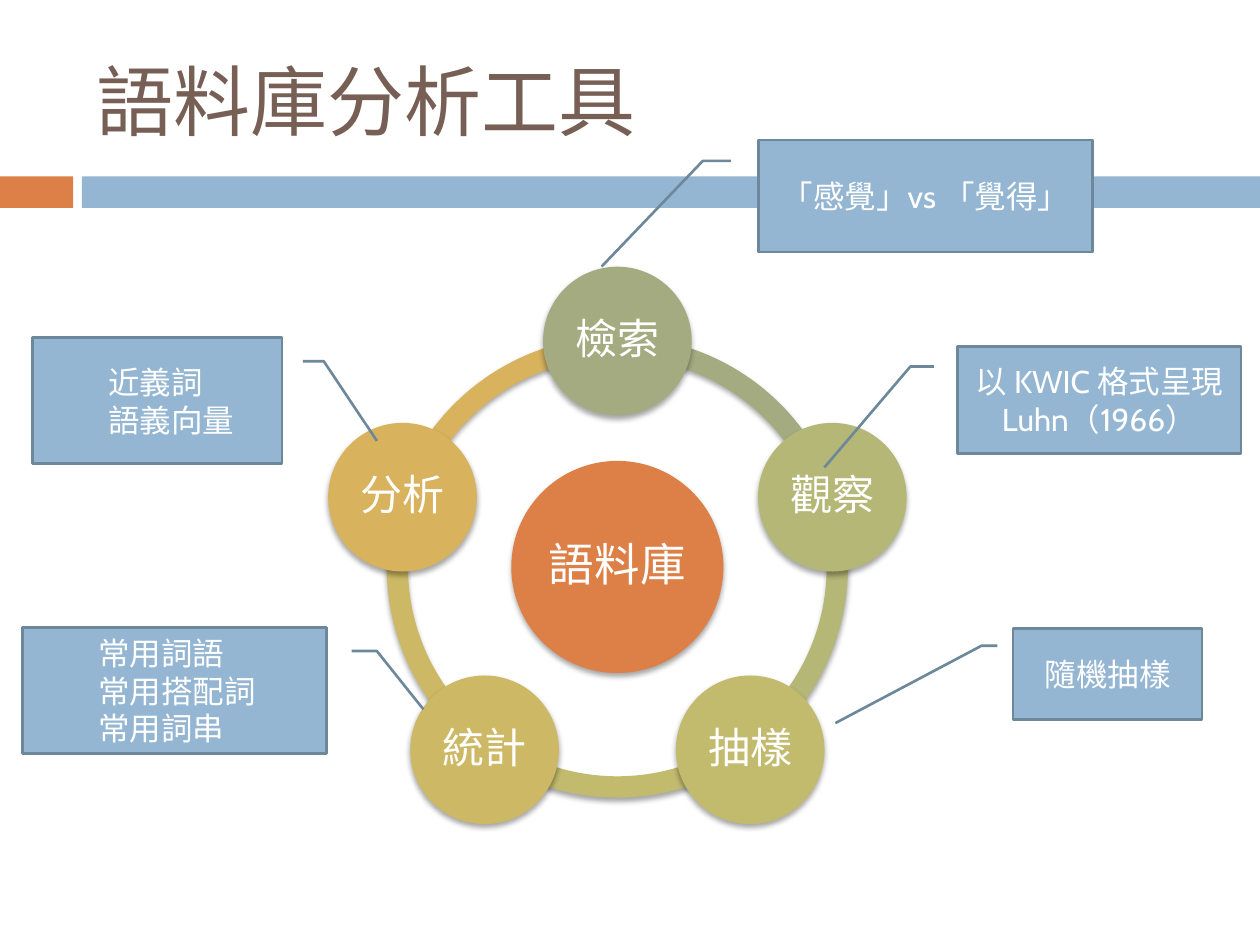
from math import cos, radians, sin

from lxml import etree
from pptx import Presentation
from pptx.dml.color import RGBColor
from pptx.enum.shapes import MSO_SHAPE as Shape
from pptx.enum.text import MSO_ANCHOR as Anchor, PP_ALIGN as Align
from pptx.oxml.ns import qn
from pptx.util import Inches, Pt

# Grid of 100 columns by 75 rows
CELL = Inches(0.1)
COLUMNS, ROWS = 100, 75
FONT = "Cabin"
COLORS = {
    "title": "775F55", "orange": "DD8047", "blue": "94B6D2",
    "edge": "6D879B", "white": "FFFFFF", "black": "000000",
    "search": "A5AB81", "observe": "B5B777", "sample": "C2BB6E",
    "count": "CDB965", "analyse": "D8B25C",
}
# Clockwise from the top
STAGES = [("檢索", "search"), ("觀察", "observe"), ("抽樣", "sample"),
          ("統計", "count"), ("分析", "analyse")]
# Box, lines, tip of the leader (y, x as shares of the box), on the left side
CALLOUTS = [
    ((60.2, 11.1, 26.5, 8.9), ["「感覺」vs 「覺得」"], (1.13, -0.47), False),
    ((76, 27.5, 22.5, 8.5), ["以 KWIC 格式呈現", "Luhn（1966）"], (1.13, -0.47), False),
    ((80.4, 49.9, 15, 7.2), ["隨機抽樣"], (1.04, -0.94), False),
    ((1.8, 49.8, 24.1, 10), ["常用詞語", "常用搭配詞", "常用詞串"], (0.65, -0.32), True),
    ((2.6, 26.8, 19.8, 10), ["近義詞", "語義向量"], (0.82, -0.38), True),
]


def color(name):
    return RGBColor.from_string(COLORS[name])


def place(box):
    return [round(length * CELL) for length in box]


def add_filled(shapes, kind, box, fill):
    shape = shapes.add_shape(kind, *place(box))
    shape.shadow.inherit = False
    shape.fill.solid()
    shape.fill.fore_color.rgb = color(fill)
    shape.line.fill.background()
    return shape


def write(shape, lines, size, tint="white", align=Align.CENTER):
    frame = shape.text_frame
    frame.word_wrap = True
    frame.vertical_anchor = Anchor.MIDDLE
    frame.text = "\n".join(lines)
    for para in frame.paragraphs:
        para.alignment = align
        for span in para.runs:
            span.font.size = Pt(size)
            span.font.name = FONT
            span.font.color.rgb = color(tint)
    return frame


def add_shadow(shape):
    effects = shape._element.spPr.find(qn("a:effectLst"))
    shadow = etree.SubElement(effects, qn("a:outerShdw"), blurRad=str(Pt(3)),
                              dist=str(Pt(2)), dir="5400000", rotWithShape="0")
    tint = etree.SubElement(shadow, qn("a:srgbClr"), val=COLORS["black"])
    etree.SubElement(tint, qn("a:alpha"), val="35000")


def add_header(page, box):
    left, top, width, height = box
    # Colour band
    band_top, band_height = top + 11.5, 2.5
    add_filled(page.shapes, Shape.RECTANGLE,
               (left, band_top, 5.8, band_height), "orange")
    add_filled(page.shapes, Shape.RECTANGLE,
               (left + 6.5, band_top, width - 6.5, band_height), "blue")
    # Title
    title = page.shapes.add_textbox(*place((left + 6.7, top, 89.2, height)))
    write(title, ["語料庫分析工具"], 44, "title", Align.LEFT)


def add_disc(shapes, center, diameter, label, size, fill):
    x, y = center
    box = (x - diameter / 2, y - diameter / 2, diameter, diameter)
    disc = add_filled(shapes, Shape.OVAL, box, fill)
    add_shadow(disc)
    frame = write(disc, [label], size)
    frame.margin_left = frame.margin_right = Inches(0.03)
    frame.margin_top = frame.margin_bottom = Inches(0.03)
    frame.paragraphs[0].line_spacing = 0.9


def add_cycle(page, box):
    left, top, width, height = box
    shapes = page.shapes.add_group_shape().shapes
    x, y = left + width / 2, top + height / 2
    orbit = 0.49 * width
    step = 360 / len(STAGES)
    angles = [(270 + step * index) % 360 for index in range(len(STAGES))]
    # Ring segments; 0.6 turns degrees into adjustment units
    for (_, fill), angle in reversed(list(zip(STAGES, angles))):
        arc = add_filled(shapes, Shape.BLOCK_ARC, box, fill)
        arc.adjustments[0] = angle * 0.6
        arc.adjustments[1] = (angle + step) % 360 * 0.6
        arc.adjustments[2] = 0.046
        add_shadow(arc)
    # Hub and stages
    add_disc(shapes, (x, y), 0.46 * width, "語料庫", 26, "orange")
    for (label, fill), angle in zip(STAGES, angles):
        center = (x + orbit * cos(radians(angle)), y + orbit * sin(radians(angle)))
        add_disc(shapes, center, 11.8, label, 24, fill)


def add_callout(page, box, lines, tip, on_left):
    callout = add_filled(page.shapes, Shape.LINE_CALLOUT_2, box, "blue")
    callout.line.color.rgb = color("edge")
    callout.line.width = Pt(1.5)
    for index, value in enumerate((0.1875, -0.0833, 0.1875, -0.1667, *tip)):
        callout.adjustments[index] = value
    frame = write(callout, lines, 18, align=Align.LEFT if on_left else Align.CENTER)
    if on_left:
        # Leader points right, text is indented
        callout._element.spPr.find(qn("a:xfrm")).set("flipH", "1")
        for para in frame.paragraphs:
            para._p.get_or_add_pPr().set("marL", str(Inches(0.5)))


def main():
    deck = Presentation()
    deck.slide_width, deck.slide_height = COLUMNS * CELL, ROWS * CELL
    page = deck.slides.add_slide(deck.slide_layouts[6])
    add_header(page, (0, 2.5, COLUMNS, 10.8))
    add_cycle(page, (30.7, 26.7, 36.6, 36.6))
    for callout in CALLOUTS:
        add_callout(page, *callout)
    deck.save("out.pptx")


if __name__ == "__main__":
    main()
